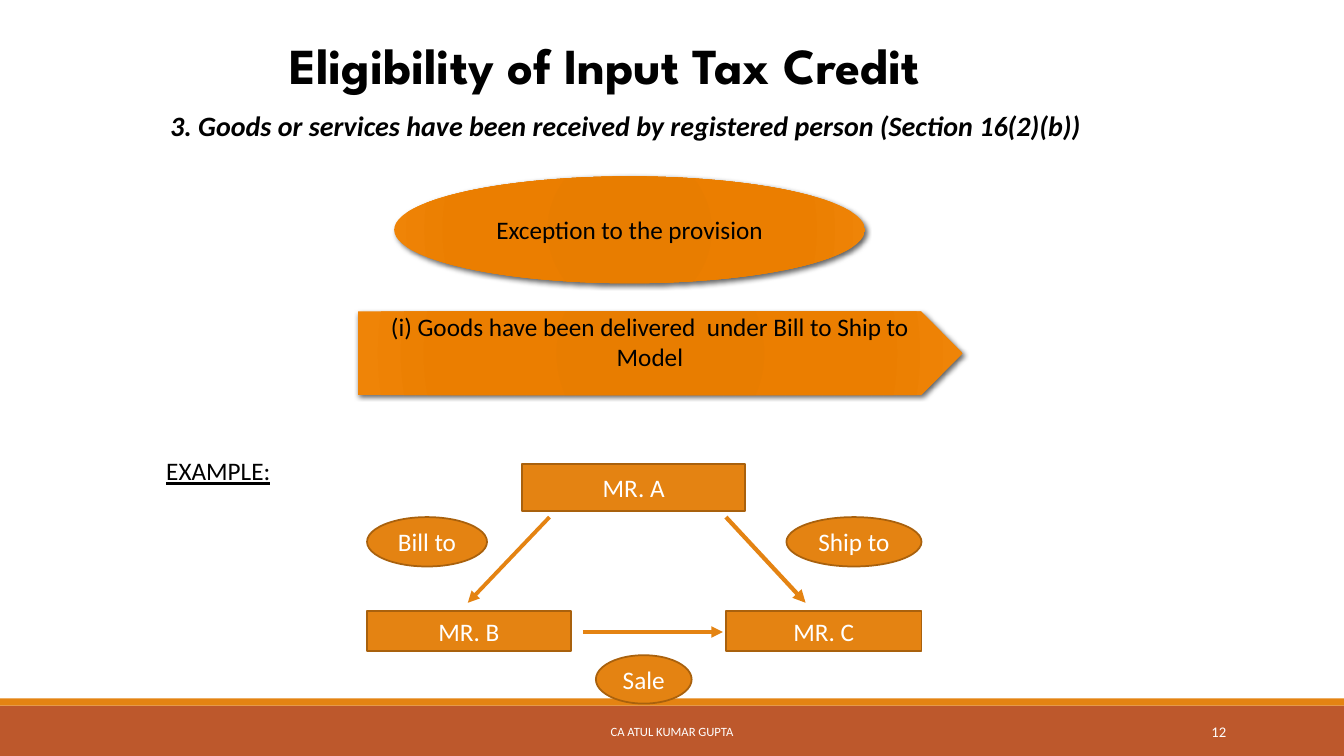
"""Build the slide on eligibility of input tax credit."""
from dataclasses import dataclass

from lxml import etree
from pptx import Presentation
from pptx import util as u
from pptx.dml.color import RGBColor
from pptx.enum import shapes, text
from pptx.oxml import ns

BLACK, WHITE = "000000", "FFFFFF"
ORANGE, BROWN, RUST = "E48312", "A9610D", "BD582C"
STOPS = ((0, "E57B00"), (34, "E87D00"), (70, "EB7E00"), (100, "EF8407"))
KIND = shapes.MSO_SHAPE
ALIGN = text.PP_ALIGN
ANCHOR = text.MSO_ANCHOR


@dataclass
class Box:
    """A shape with a place and an optional label."""
    kind: KIND
    left: float
    top: float
    width: float
    height: float
    label: str = ""
    fill: str = ORANGE
    line: str = ""


@dataclass
class Note:
    """A line of free text."""
    label: str
    left: float
    top: float
    width: float
    height: float
    size: float
    align: ALIGN = ALIGN.LEFT
    anchor: ANCHOR = ANCHOR.TOP
    color: str = BLACK
    font: str = "Calibri"
    bold: bool = False
    slant: bool = False
    under: bool = False


@dataclass
class Arrow:
    """A straight arrow from one point to another."""
    x1: float
    y1: float
    x2: float
    y2: float
    width: float = 2.75


BARS = (
    Box(KIND.RECTANGLE, 0, 7, 13.33, 0.5, fill=RUST),
    Box(KIND.RECTANGLE, 0, 6.93, 13.33, 0.07),
)
OVAL = Box(KIND.OVAL, 3.91, 1.75, 4.67, 1.06, "Exception to the provision")
PLATE = Box(KIND.PENTAGON, 3.55, 3.09, 6, 0.83,
            "(i) Goods have been delivered  under Bill to Ship to Model")
NODES = (
    Box(KIND.RECTANGLE, 5.18, 4.6, 2.21, 0.47, "MR. A", line=BROWN),
    Box(KIND.RECTANGLE, 3.64, 6.06, 2.02, 0.4, "MR. B", line=BROWN),
    Box(KIND.RECTANGLE, 7.2, 6.06, 1.94, 0.4, "MR. C", line=BROWN),
)
TAGS = (
    Box(KIND.OVAL, 3.64, 5.13, 1.19, 0.49, "Bill to", line=BROWN),
    Box(KIND.OVAL, 7.8, 5.13, 1.34, 0.49, "Ship to", line=BROWN),
    Box(KIND.OVAL, 5.91, 6.5, 0.95, 0.48, "Sale", line=BROWN),
)
ARROWS = (
    Arrow(7.2, 5.13, 7.99, 5.98, 3),
    Arrow(5.45, 5.13, 4.64, 5.98),
    Arrow(5.78, 6.27, 7.17, 6.27),
)
HEADS = (
    Note("Eligibility of Input Tax Credit", 2.77, 0.29, 8.49, 0.71, 36,
         font="League Spartan", bold=True),
    Note("3. Goods or services have been received by registered person "
         "(Section 16(2)(b))", 1.59, 1.03, 9.37, 0.44, 20, ALIGN.JUSTIFY,
         bold=True, slant=True),
    Note("EXAMPLE:", 1.55, 4.47, 1.31, 0.4, 18, under=True),
)
FEET = (
    Note("CA ATUL KUMAR GUPTA", 4.03, 7.06, 5.27, 0.4, 9, ALIGN.CENTER,
         ANCHOR.MIDDLE, WHITE),
    Note("12", 10.83, 7.06, 1.43, 0.4, 10.5, ALIGN.RIGHT,
         ANCHOR.MIDDLE, WHITE),
)


def rgb(code: str) -> RGBColor:
    """Turn a hex string into a colour."""
    return RGBColor.from_string(code)


def sub(node, tag: str, **attrs: str):
    """Add a child element in the drawing namespace."""
    return etree.SubElement(node, ns.qn(tag), **attrs)


def write(shape, note: Note) -> None:
    """Put the note's text into a shape and format it."""
    frame = shape.text_frame
    frame.text = note.label
    frame.word_wrap = True
    frame.vertical_anchor = note.anchor
    para = frame.paragraphs[0]
    para.alignment = note.align
    font = para.runs[0].font
    font.name, font.size = note.font, u.Pt(note.size)
    font.bold, font.italic, font.underline = note.bold, note.slant, note.under
    font.color.rgb = rgb(note.color)


def add_note(slide, note: Note) -> None:
    """Draw a text box."""
    area = map(u.Inches, (note.left, note.top, note.width, note.height))
    write(slide.shapes.add_textbox(*area), note)


def add_box(slide, box: Box, ink: str = WHITE):
    """Draw a filled shape with its label."""
    area = [u.Inches(n) for n in (box.left, box.top, box.width, box.height)]
    shape = slide.shapes.add_shape(box.kind, *area)
    shape.shadow.inherit = False
    shape.fill.solid()
    shape.fill.fore_color.rgb = rgb(box.fill)
    if box.line:
        shape.line.color.rgb = rgb(box.line)
        shape.line.width = u.Pt(1.25)
    else:
        shape.line.fill.background()
    if box.label:
        write(shape, Note(box.label, box.left, box.top, box.width, box.height,
                          18, ALIGN.CENTER, ANCHOR.MIDDLE, ink))
    return shape


def add_glow(slide, box: Box):
    """Draw a shape with a radial gradient and a soft shadow."""
    shape = add_box(slide, box, BLACK)
    props = shape._element.spPr
    grad = etree.Element(ns.qn("a:gradFill"), rotWithShape="1")
    stops = sub(grad, "a:gsLst")
    for spot, code in STOPS:
        stop = sub(stops, "a:gs", pos=str(spot * 1000))
        sub(stop, "a:srgbClr", val=code)
    way = sub(grad, "a:path", path="circle")
    sub(way, "a:fillToRect", **dict.fromkeys("ltrb", "100000"))
    props.replace(props.find(ns.qn("a:solidFill")), grad)
    cast = sub(props.find(ns.qn("a:effectLst")), "a:outerShdw",
               blurRad=str(u.Pt(3.5)), dist=str(u.Pt(2)), dir="2700000",
               algn="br", rotWithShape="0")
    tint = sub(cast, "a:srgbClr", val=BLACK)
    sub(tint, "a:alpha", val="60000")
    return shape


def add_arrow(slide, arrow: Arrow) -> None:
    """Draw a connector with a triangle at its end."""
    ends = map(u.Inches, (arrow.x1, arrow.y1, arrow.x2, arrow.y2))
    link = slide.shapes.add_connector(shapes.MSO_CONNECTOR.STRAIGHT, *ends)
    link.line.color.rgb = rgb(ORANGE)
    link.line.width = u.Pt(arrow.width)
    sub(link.line._get_or_add_ln(), "a:tailEnd", type="triangle")
    sub(link._element.spPr, "a:effectLst")


def main() -> None:
    """Draw the slide and save it."""
    deck = Presentation()
    deck.slide_width, deck.slide_height = u.Inches(13.33), u.Inches(7.5)
    slide = deck.slides.add_slide(deck.slide_layouts[6])
    for bar in BARS:
        add_box(slide, bar)
    for note in HEADS:
        add_note(slide, note)
    add_glow(slide, OVAL)
    frame = add_glow(slide, PLATE).text_frame
    frame.vertical_anchor = ANCHOR.TOP
    frame.margin_top = 0
    for node in NODES:
        add_box(slide, node)
    for arrow in ARROWS:
        add_arrow(slide, arrow)
    for tag in TAGS:
        add_box(slide, tag)
    for note in FEET:
        add_note(slide, note)
    deck.save("out.pptx")


if __name__ == "__main__":
    main()
